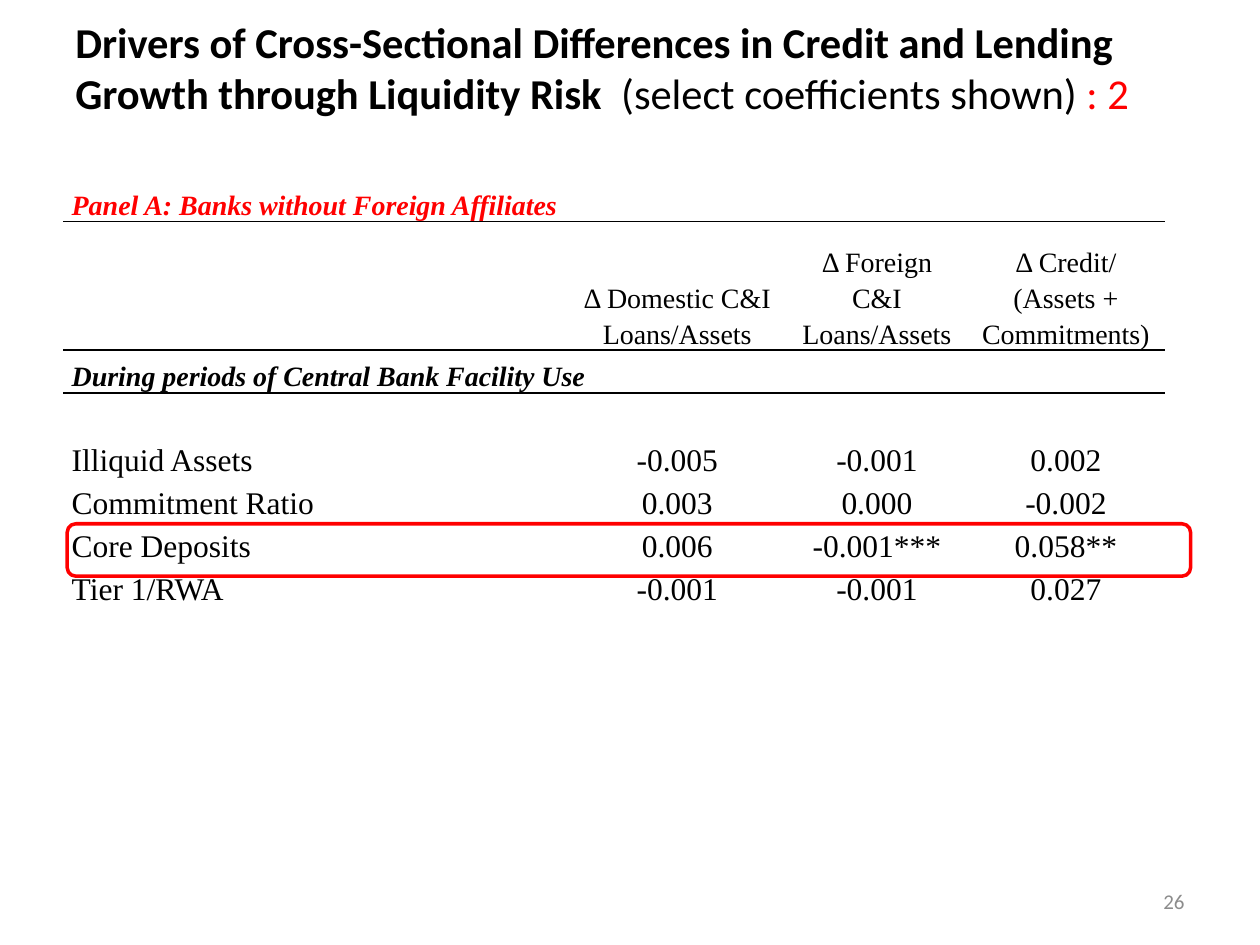
from lxml import etree
from pptx import Presentation
from pptx.dml.color import RGBColor
from pptx.enum.shapes import MSO_SHAPE
from pptx.enum.text import MSO_ANCHOR, PP_ALIGN
from pptx.oxml.ns import qn
from pptx.util import Pt

LEFT, CENTER, RIGHT = PP_ALIGN.LEFT, PP_ALIGN.CENTER, PP_ALIGN.RIGHT
MIDDLE, BOTTOM = MSO_ANCHOR.MIDDLE, MSO_ANCHOR.BOTTOM
ROUNDED_RECTANGLE = MSO_SHAPE.ROUNDED_RECTANGLE

SANS, SERIF = "Calibri", "Times New Roman"
BLACK, RED, GRAY = "000000", "FF0000", "8C8C8C"
PLAIN_TABLE_STYLE = "{2D5ABB26-0587-4C30-8999-92F81FD0307C}"

COLUMN_WIDTHS = [288, 126, 102.24, 113.76]
ROW_HEIGHT, HEADER_HEIGHT = 24.48, 73.44
PANEL_TITLE = "Panel A: Banks without Foreign Affiliates"
HEADERS = ["Δ Domestic C&I Loans/Assets", "Δ Foreign C&I Loans/Assets",
           "Δ Credit/ (Assets + Commitments)"]
PERIOD = "During periods of Central Bank Facility Use"
COEFFICIENTS = [
    ["Illiquid Assets", "-0.005", "-0.001", "0.002"],
    ["Commitment Ratio", "0.003", "0.000", "-0.002"],
    ["Core Deposits", "0.006", "-0.001***", "0.058**"],
    ["Tier 1/RWA", "-0.001", "-0.001", "0.027"],
]


def color(hex_string):
    return RGBColor.from_string(hex_string)


def style_run(run, font, size, hex_string=BLACK, bold=False, italic=False):
    run.font.name = font
    run.font.size = Pt(size)
    run.font.color.rgb = color(hex_string)
    run.font.bold = bold
    run.font.italic = italic


def add_text_frame(slide, box):
    text_frame = slide.shapes.add_textbox(*map(Pt, box)).text_frame
    text_frame.word_wrap = True
    text_frame.vertical_anchor = MIDDLE
    return text_frame


def add_title(slide, box):
    text_frame = add_text_frame(slide, box)
    text_frame.margin_bottom = Pt(26)
    paragraph = text_frame.paragraphs[0]
    parts = [
        ("Drivers of Cross-Sectional Differences in Credit and Lending "
         "Growth through Liquidity Risk  ", BLACK, True),
        ("(select coefficients shown) ", BLACK, False),
        (": 2", RED, False),
    ]
    for text, hex_string, bold in parts:
        run = paragraph.add_run()
        run.text = text
        style_run(run, SANS, 24.3, hex_string, bold)


def add_slide_number(slide, box):
    text_frame = add_text_frame(slide, box)
    text_frame.text = "26"
    paragraph = text_frame.paragraphs[0]
    paragraph.alignment = RIGHT
    style_run(paragraph.runs[0], SANS, 12, GRAY)


def write_cell(cell, text, alignment, size, **run_style):
    cell.text_frame.text = text
    paragraph = cell.text_frame.paragraphs[0]
    paragraph.alignment = alignment
    paragraph.line_spacing = 1.15
    style_run(paragraph.runs[0], SERIF, size, **run_style)


def add_border(cell, side):
    """Draw a black rule on one side: "T" for top or "B" for bottom."""
    properties = cell._tc.get_or_add_tcPr()
    line = etree.SubElement(properties, qn("a:ln" + side), w=str(Pt(1)))
    fill = etree.SubElement(line, qn("a:solidFill"))
    etree.SubElement(fill, qn("a:srgbClr"), val=BLACK)


def add_coefficient_table(slide, box):
    row_heights = [ROW_HEIGHT, HEADER_HEIGHT] + [ROW_HEIGHT] * 6
    table = slide.shapes.add_table(
        len(row_heights), len(COLUMN_WIDTHS), *map(Pt, box)).table
    table.first_row = table.horz_banding = False
    table._tbl.tblPr.find(qn("a:tableStyleId")).text = PLAIN_TABLE_STYLE
    for column, width in zip(table.columns, COLUMN_WIDTHS):
        column.width = Pt(width)
    for row, height in zip(table.rows, row_heights):
        row.height = Pt(height)

    border_sides = {0: "B", 1: "TB", 2: "T"}
    for row_index, row in enumerate(table.rows):
        for cell in row.cells:
            cell.margin_left = cell.margin_right = Pt(5)
            cell.margin_top = cell.margin_bottom = 0
            cell.vertical_anchor = BOTTOM
            for side in border_sides.get(row_index, ""):
                add_border(cell, side)
            cell.fill.background()

    write_cell(table.cell(0, 0), PANEL_TITLE, LEFT, 16,
               hex_string=RED, bold=True, italic=True)
    for column_index, header in enumerate(HEADERS, start=1):
        write_cell(table.cell(1, column_index), header, CENTER, 16)
    table.cell(2, 0).merge(table.cell(2, 3))
    write_cell(table.cell(2, 0), PERIOD, LEFT, 16, bold=True, italic=True)
    for row_index, values in enumerate(COEFFICIENTS, start=4):
        for column_index, value in enumerate(values):
            alignment = CENTER if column_index else LEFT
            write_cell(table.cell(row_index, column_index), value, alignment, 18)


def add_highlight(slide, box):
    shape = slide.shapes.add_shape(ROUNDED_RECTANGLE, *map(Pt, box))
    shape.shadow.inherit = False
    shape.fill.background()
    shape.line.color.rgb = color(RED)
    shape.line.width = Pt(2)


def main():
    presentation = Presentation()
    presentation.slide_width, presentation.slide_height = Pt(720), Pt(540)
    slide = presentation.slides.add_slide(presentation.slide_layouts[6])
    add_coefficient_table(slide, (36, 102.24, 630, 244.8))
    add_title(slide, (36, 21.6, 648, 56))
    add_slide_number(slide, (516, 500.5, 168, 28.8))
    add_highlight(slide, (38.4, 299.3, 642, 30))
    presentation.save("out.pptx")


if __name__ == "__main__":
    main()
